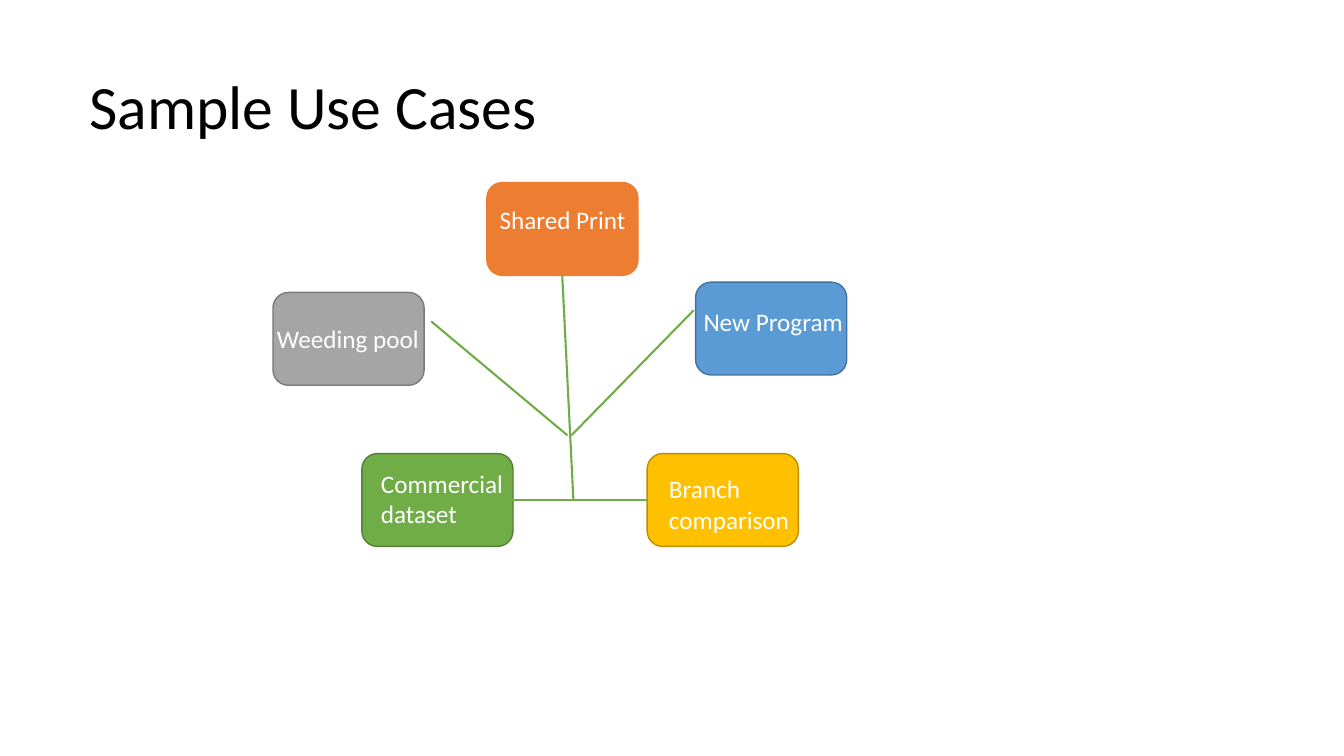
from dataclasses import dataclass
from lxml.etree import SubElement
from pptx import Presentation
from pptx.dml.color import RGBColor as RGB
from pptx.enum.shapes import MSO_CONNECTOR as Link, MSO_SHAPE as Shape
from pptx.enum.text import MSO_ANCHOR as Anchor
from pptx.oxml.ns import qn
from pptx.util import Cm, Pt


@dataclass(frozen=True)
class Theme:
    font: str = "Calibri"
    title: int = 44
    label: int = 18
    edge: float = 1
    stem: float = 1.5
    black: str = "000000"
    white: str = "FFFFFF"
    orange: tuple = ("ED7D31", "ED7D31")
    blue: tuple = ("5B9BD5", "43739E")
    gray: tuple = ("A5A5A5", "7A7A7A")
    green: tuple = ("70AD47", "538035")
    gold: tuple = ("FFC000", "BD8E00")


class Board:
    def __init__(self, slide, theme):
        self.shapes = slide.shapes
        self.theme = theme

    def text(self, words, x, y, w, h, size, color, anchor=Anchor.TOP, lead=1.0):
        frame = self.shapes.add_textbox(Cm(x), Cm(y), Cm(w), Cm(h)).text_frame
        frame.word_wrap = True
        frame.vertical_anchor = anchor
        para = frame.paragraphs[0]
        para.text = words
        para.line_spacing = lead
        para.font.name = self.theme.font
        para.font.size = Pt(size)
        para.font.color.rgb = RGB.from_string(color)

    def box(self, x, y, w, h, hue):
        fill, edge = hue
        box = self.shapes.add_shape(
            Shape.ROUNDED_RECTANGLE, Cm(x), Cm(y), Cm(w), Cm(h))
        box.shadow.inherit = False
        box.fill.solid()
        box.fill.fore_color.rgb = RGB.from_string(fill)
        box.line.color.rgb = RGB.from_string(edge)
        box.line.width = Pt(self.theme.edge)

    def line(self, x1, y1, x2, y2):
        line = self.shapes.add_connector(
            Link.STRAIGHT, Cm(x1), Cm(y1), Cm(x2), Cm(y2))
        line.line.color.rgb = RGB.from_string(self.theme.green[0])
        line.line.width = Pt(self.theme.stem)
        SubElement(line._element.spPr, qn("a:effectLst"))


def main():
    deck = Presentation()
    deck.slide_width, deck.slide_height = Cm(33.87), Cm(19.05)
    theme = Theme()
    board = Board(deck.slides.add_slide(deck.slide_layouts[6]), theme)

    # Title
    board.text("Sample Use Cases", 2, 0.91, 29.21, 3.68,
               theme.title, theme.black, Anchor.MIDDLE, 0.9)

    # Use cases: hue, box corner, label, label corner and size
    cases = [
        (theme.orange, 12.27, 4.6, "Shared Print", 12.34, 5.03, 3.99, 1.02),
        (theme.blue, 17.53, 7.11, "New Program", 17.48, 7.59, 4.37, 1.02),
        (theme.gray, 6.88, 7.37, "Weeding pool", 6.73, 8.03, 4.27, 1.02),
        (theme.green, 9.12, 11.43, "Commercial dataset", 9.35, 11.68, 4.37, 1.8),
        (theme.gold, 16.31, 11.43, "Branch comparison", 16.61, 11.81, 4.37, 1.8),
    ]
    for hue, x, y, words, *area in cases:
        board.box(x, y, 3.81, 2.34, hue)
        board.text(words, *area, theme.label, theme.white)

    # Stem, two branches and base
    for ends in [
        (14.17, 6.96, 14.45, 12.6),
        (17.48, 7.82, 14.4, 10.97),
        (14.3, 10.97, 10.87, 8.1),
        (12.62, 12.6, 16.31, 12.6),
    ]:
        board.line(*ends)

    deck.save("out.pptx")


if __name__ == "__main__":
    main()
